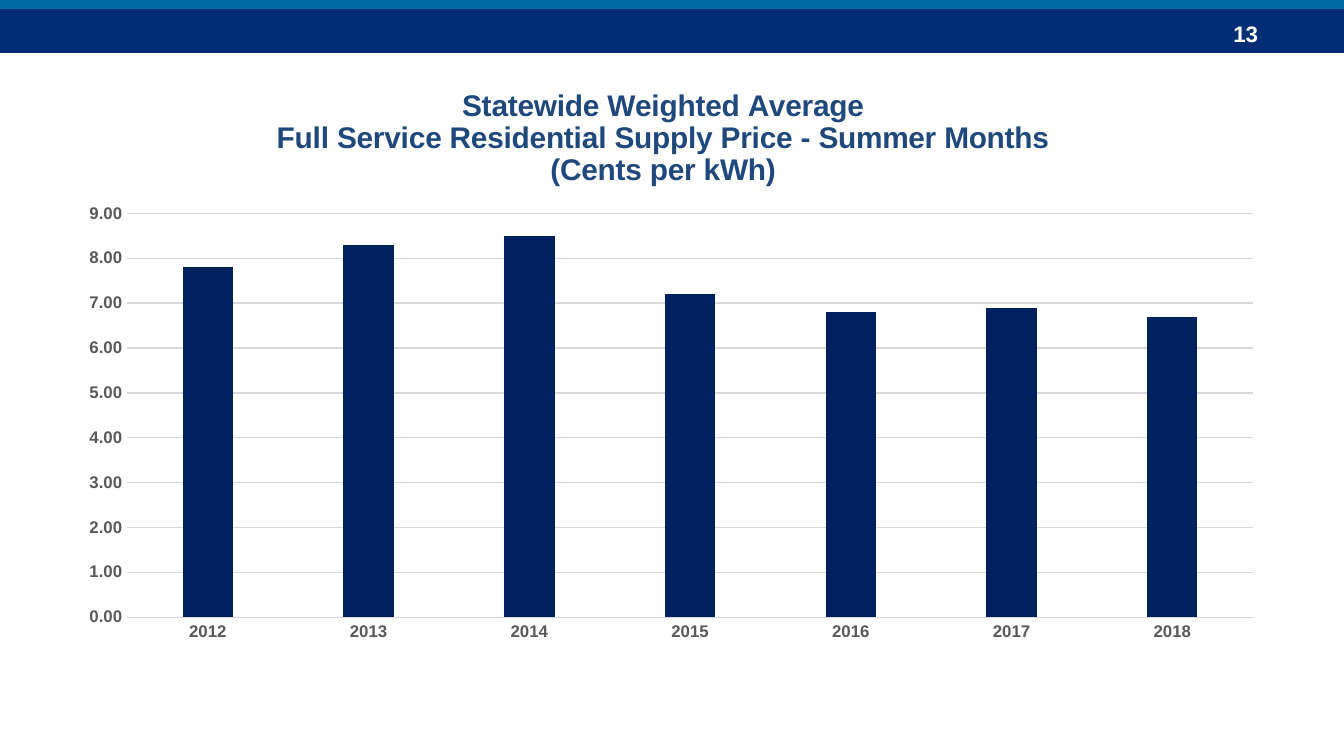
"""Build the slide on statewide summer residential supply prices."""
from dataclasses import dataclass

import pptx
import pptx.chart.data
import pptx.dml.color
import pptx.enum.chart
import pptx.enum.shapes
import pptx.enum.text
import pptx.oxml
import pptx.oxml.ns
import pptx.util

EMU_PER_PX = 914400 / 134.4
FONT_NAME = "Arial"
NAVY = pptx.dml.color.RGBColor(0x00, 0x2D, 0x73)
BLUE = pptx.dml.color.RGBColor(0x00, 0x69, 0xA6)
WHITE = pptx.dml.color.RGBColor(0xFF, 0xFF, 0xFF)
TITLE_BLUE = pptx.dml.color.RGBColor(0x1F, 0x49, 0x7D)
BAR_NAVY = pptx.dml.color.RGBColor(0x00, 0x20, 0x60)
LABEL_GRAY = pptx.dml.color.RGBColor(0x59, 0x59, 0x59)
GRID_GRAY = pptx.dml.color.RGBColor(0xD9, 0xD9, 0xD9)

TITLE_LINES = (
    "Statewide Weighted Average",
    "Full Service Residential Supply Price - Summer Months",
    "(Cents per kWh)",
)
PRICES = {
    "2012": 7.8, "2013": 8.3, "2014": 8.5, "2015": 7.2,
    "2016": 6.8, "2017": 6.9, "2018": 6.7,
}


@dataclass(frozen=True)
class Band:
    top: int
    height: int
    color: pptx.dml.color.RGBColor


BANDS = (Band(9, 44, NAVY), Band(0, 9, BLUE))


def px(length: int) -> pptx.util.Emu:
    return pptx.util.Emu(round(length * EMU_PER_PX))


def style_font(font, size: int, color: pptx.dml.color.RGBColor) -> None:
    font.name = FONT_NAME
    font.size = pptx.util.Pt(size)
    font.bold = True
    font.color.rgb = color


def draw_band(page, band: Band, width: int) -> None:
    shape = page.shapes.add_shape(
        pptx.enum.shapes.MSO_SHAPE.RECTANGLE, 0, px(band.top), px(width), px(band.height)
    )
    shape.shadow.inherit = False
    shape.fill.solid()
    shape.fill.fore_color.rgb = band.color
    shape.line.fill.background()


def draw_page_number(page, number: str) -> None:
    box = page.shapes.add_textbox(px(1220), px(13), px(101), px(40))
    box.text_frame.word_wrap = True
    box.text_frame.vertical_anchor = pptx.enum.text.MSO_ANCHOR.MIDDLE
    para = box.text_frame.paragraphs[0]
    para.text = number
    style_font(para.font, 12, WHITE)


def set_layout(parent, index: int, **fractions: float) -> None:
    for old in parent.findall(pptx.oxml.ns.qn("c:layout")):
        parent.remove(old)
    target = '<c:layoutTarget val="inner"/>' if "w" in fractions else ""
    modes = "".join(f'<c:{key}Mode val="edge"/>' for key in ("x", "y"))
    values = "".join(f'<c:{key} val="{value}"/>' for key, value in fractions.items())
    parent.insert(index, pptx.oxml.parse_xml(
        f'<c:layout {pptx.oxml.ns.nsdecls("c")}><c:manualLayout>'
        f"{target}{modes}{values}</c:manualLayout></c:layout>"
    ))


def style_line(line) -> None:
    line.color.rgb = GRID_GRAY
    line.width = pptx.util.Pt(0.75)


def style_axes(chart) -> None:
    for axis in (chart.category_axis, chart.value_axis):
        axis.major_tick_mark = pptx.enum.chart.XL_TICK_MARK.NONE
        axis.minor_tick_mark = pptx.enum.chart.XL_TICK_MARK.NONE
        style_font(axis.tick_labels.font, 9, LABEL_GRAY)
    style_line(chart.category_axis.format.line)
    value_axis = chart.value_axis
    value_axis.minimum_scale, value_axis.maximum_scale = 0, 9
    value_axis.major_unit = 1
    value_axis.tick_labels.number_format = "0.00"
    value_axis.tick_labels.number_format_is_linked = False
    value_axis.format.line.fill.background()
    style_line(value_axis.major_gridlines.format.line)


def draw_title(chart) -> None:
    chart.has_title = True
    frame = chart.chart_title.text_frame
    for index, text in enumerate(TITLE_LINES):
        para = frame.add_paragraph() if index else frame.paragraphs[0]
        span = para.add_run()
        span.text = text
        para.alignment = pptx.enum.text.PP_ALIGN.CENTER
        for font in (para.font, span.font):
            style_font(font, 16, TITLE_BLUE)
    chart.chart_title.include_in_layout = False
    set_layout(chart.chart_title.element, 1, x=0.17, y=0.03)


def draw_chart(page) -> None:
    data = pptx.chart.data.CategoryChartData(number_format="0.00")
    data.categories = list(PRICES)
    data.add_series("Series 1", list(PRICES.values()))
    chart = page.shapes.add_chart(
        pptx.enum.chart.XL_CHART_TYPE.COLUMN_CLUSTERED,
        px(67), px(65), px(1210), px(594), data,
    ).chart
    style_font(chart.font, 10, pptx.dml.color.RGBColor(0, 0, 0))
    chart.has_legend = False
    draw_title(chart)
    style_axes(chart)
    plot = chart.plots[0]
    plot.gap_width = 219
    plot.overlap = -27
    plot.vary_by_categories = False
    fill = plot.series[0].format.fill
    fill.solid()
    fill.fore_color.rgb = BAR_NAVY
    plot_area = chart.element.find(".//" + pptx.oxml.ns.qn("c:plotArea"))
    set_layout(plot_area, 0, x=0.05, y=0.25, w=0.93, h=0.68)


def main() -> None:
    deck = pptx.Presentation()
    deck.slide_width, deck.slide_height = px(1344), px(756)
    page = deck.slides.add_slide(deck.slide_layouts[6])
    for band in BANDS:
        draw_band(page, band, 1344)
    draw_page_number(page, "13")
    draw_chart(page)
    deck.save("out.pptx")


if __name__ == "__main__":
    main()
